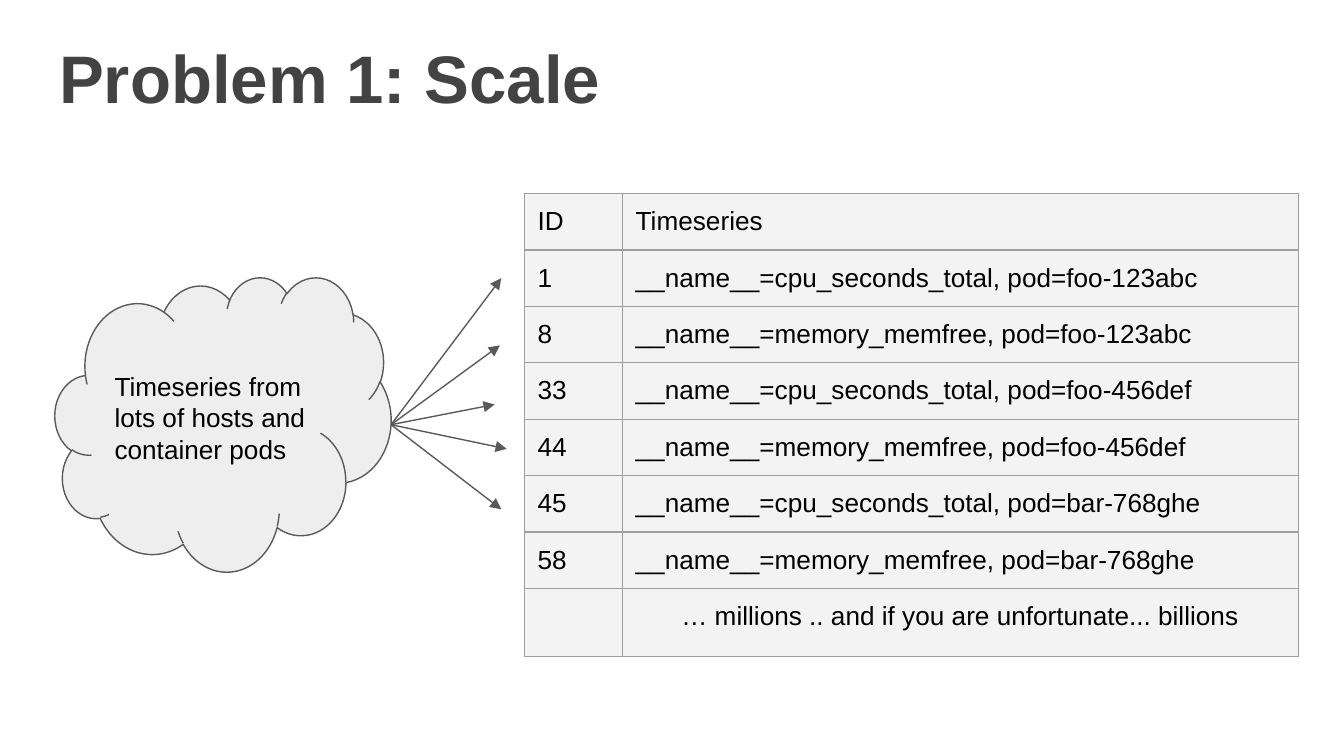
from pptx import Presentation
from pptx.dml.color import RGBColor
from pptx.enum.shapes import MSO_CONNECTOR, MSO_SHAPE
from pptx.enum.text import MSO_ANCHOR, PP_ALIGN
from pptx.oxml.ns import qn
from pptx.util import Inches, Pt
from lxml.etree import SubElement

COLORS = {
    "title": "434343",
    "text": "000000",
    "cloud": "EEEEEE",
    "line": "595959",
    "cell": "F3F3F3",
    "border": "9E9E9E",
}
FONT = "Arial"
PAD = Inches(0.1)
ROWS = [
    ("ID", "Timeseries"),
    ("1", "__name__=cpu_seconds_total, pod=foo-123abc"),
    ("8", "__name__=memory_memfree, pod=foo-123abc"),
    ("33", "__name__=cpu_seconds_total, pod=foo-456def"),
    ("44", "__name__=memory_memfree, pod=foo-456def"),
    ("45", "__name__=cpu_seconds_total, pod=bar-768ghe"),
    ("58", "__name__=memory_memfree, pod=bar-768ghe"),
    ("", "… millions .. and if you are unfortunate... billions"),
]
START = (2.91, 3.16)
TIPS = [(3.73, 2.07), (3.72, 2.57), (3.68, 3.01), (3.77, 3.34), (3.73, 3.79)]


def color(name):
    return RGBColor.from_string(COLORS[name])


def paint(fill, name):
    fill.solid()
    fill.fore_color.rgb = color(name)


def write(box, text, size=14, name="text", bold=False, align=PP_ALIGN.LEFT):
    box.text = text
    para = box.paragraphs[0]
    para.alignment = align
    for run in para.runs:
        run.font.name = FONT
        run.font.size = Pt(size)
        run.font.bold = bold
        run.font.color.rgb = color(name)


def pad(box):
    box.margin_left = box.margin_right = PAD
    box.margin_top = box.margin_bottom = PAD


def add_title(slide, text):
    title = slide.shapes.title
    title.left, title.top = Inches(0.34), Inches(0.17)
    title.width, title.height = Inches(9.32), Inches(0.77)
    box = title.text_frame
    pad(box)
    box.vertical_anchor = MSO_ANCHOR.TOP
    write(box, text, 36, "title", True)


def add_cloud(slide, text):
    cloud = slide.shapes.add_shape(
        MSO_SHAPE.CLOUD, Inches(0.41), Inches(2.06), Inches(2.5), Inches(2.19))
    cloud.shadow.inherit = False
    paint(cloud.fill, "cloud")
    paint(cloud.line.fill, "line")
    cloud.line.width = Pt(0.75)
    box = cloud.text_frame
    box.word_wrap = True
    box.vertical_anchor = MSO_ANCHOR.MIDDLE
    pad(box)
    write(box, text)


def add_border(cell):
    props = cell._tc.get_or_add_tcPr()
    for side in ("a:lnL", "a:lnR", "a:lnT", "a:lnB"):
        line = SubElement(props, qn(side), w=str(Pt(0.75)))
        fill = SubElement(line, qn("a:solidFill"))
        SubElement(fill, qn("a:srgbClr"), val=COLORS["border"])


def add_grid(slide):
    grid = slide.shapes.add_table(
        len(ROWS), 2, Inches(3.9), Inches(1.44), Inches(5.76),
        Inches(0.42 * len(ROWS))).table
    grid.columns[0].width = Inches(0.73)
    grid.columns[1].width = Inches(5.03)
    for r, row in enumerate(ROWS):
        grid.rows[r].height = Inches(0.42)
        for c, text in enumerate(row):
            cell = grid.cell(r, c)
            pad(cell)
            add_border(cell)
            paint(cell.fill, "cell")
            if text:
                write(cell.text_frame, text)
    # The closing remark is centred
    grid.cell(len(ROWS) - 1, 1).text_frame.paragraphs[0].alignment = PP_ALIGN.CENTER


def add_arrow(slide, start, end):
    arrow = slide.shapes.add_connector(
        MSO_CONNECTOR.STRAIGHT, *map(Inches, start + end))
    paint(arrow.line.fill, "line")
    arrow.line.width = Pt(0.75)
    props = arrow._element.spPr
    SubElement(props.find(qn("a:ln")), qn("a:tailEnd"), type="triangle")
    SubElement(props, qn("a:effectLst"))


def main():
    # Widescreen page, 16:9
    deck = Presentation()
    deck.slide_width = Inches(10)
    deck.slide_height = Inches(10 * 9 / 16)
    slide = deck.slides.add_slide(deck.slide_layouts[5])

    # Heading
    add_title(slide, "Problem 1: Scale")

    # Source of the data
    add_cloud(slide, "Timeseries from lots of hosts and container pods")

    # Series index
    add_grid(slide)

    # Fan of arrows from cloud to table
    for tip in TIPS:
        add_arrow(slide, START, tip)

    deck.save("out.pptx")


if __name__ == "__main__":
    main()
